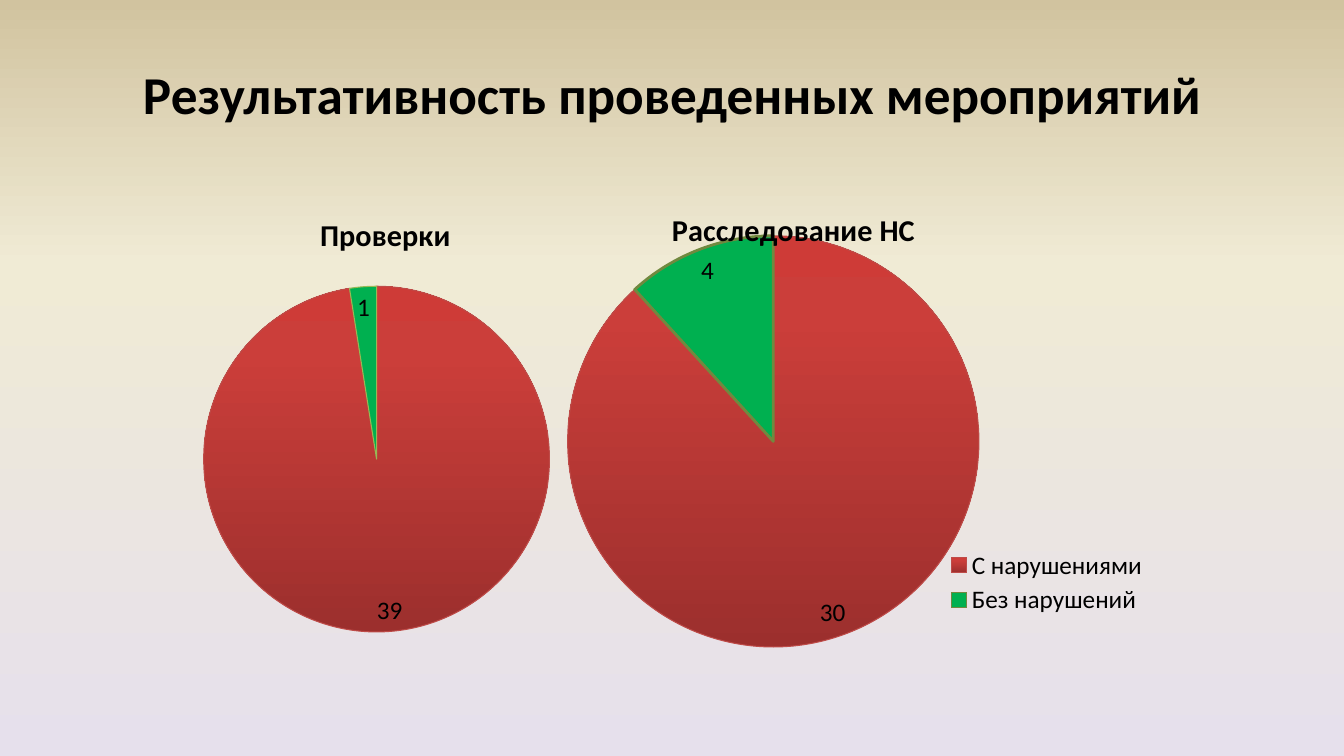
from lxml import etree
from pptx import Presentation
from pptx.chart.data import CategoryChartData as Data
from pptx.dml.color import RGBColor as RGB
from pptx.enum.chart import XL_CHART_TYPE as Kind
from pptx.enum.chart import XL_LABEL_POSITION as Spot
from pptx.enum.chart import XL_LEGEND_POSITION as Side
from pptx.enum.text import MSO_ANCHOR as Anchor
from pptx.enum.text import PP_ALIGN as Align
from pptx.oxml.ns import qn
from pptx.util import Inches, Pt

FONT = "Calibri"
HEX = {
    "text": "000000",
    "green": "00B050",
    "red edge": "BE4B48",
    "light edge": "98B955",
    "dark edge": "71893F",
}
# Gradient stops run from bottom to top
SKY = [(0, "E6E0EC"), (65, "F0EBD5"), (100, "D1C39F")]
RED = [(0, "9C2F2D"), (80, "CB3E3A"), (100, "CE3B37")]


def color(name):
    return RGB.from_string(HEX[name])


def set_font(font, size, bold=False):
    font.name, font.size, font.bold = FONT, Pt(size), bold
    font.color.rgb = color("text")


def blend(fill, root, stops):
    """Give the only gradient under root the listed stops."""
    fill.gradient()
    grad = root.find(".//" + qn("a:gradFill"))
    items = grad.find(qn("a:gsLst"))
    for old in list(items):
        items.remove(old)
    for pos, shade in stops:
        stop = etree.SubElement(items, qn("a:gs"), pos=str(pos * 1000))
        etree.SubElement(stop, qn("a:srgbClr"), val=shade)
    grad.find(qn("a:lin")).set("ang", str(270 * 60000))


def place(node, frame, spot, inner=False):
    """Fix a chart piece at a slide position: left, top and maybe size."""
    old = node.find(qn("c:layout"))
    if old is None:
        old = etree.Element(qn("c:layout"))
        before = [n for n in node if n.tag in (qn("c:tx"), qn("c:legendPos"))]
        node.insert(len(before), old)
    for kid in list(old):
        old.remove(kid)
    box = etree.SubElement(old, qn("c:manualLayout"))
    if inner:
        etree.SubElement(box, qn("c:layoutTarget"), val="inner")
    for axis in "xy":
        etree.SubElement(box, qn(f"c:{axis}Mode"), val="edge")
    left, top, wide, high = frame
    shares = [(spot[0] - left) / wide, (spot[1] - top) / high]
    shares += [size / full for size, full in zip(spot[2:], (wide, high))]
    for key, share in zip("xywh", shares):
        etree.SubElement(box, qn(f"c:{key}"), val=f"{share:.4f}")


def add_title(slide, text):
    box = slide.shapes.add_textbox(
        Inches(0.67), Inches(0.3), Inches(12), Inches(1.25))
    frame = box.text_frame
    frame.text, frame.word_wrap = text, True
    frame.vertical_anchor = Anchor.MIDDLE
    line = frame.paragraphs[0]
    line.alignment = Align.CENTER
    set_font(line.runs[0].font, 38, True)


def add_pie(slide, name, frame, cats, vals, pie, head, edge, width):
    data = Data()
    data.categories = cats
    data.add_series(name, vals)
    chart = slide.shapes.add_chart(
        Kind.PIE, *map(Inches, frame), data).chart
    set_font(chart.font, 18)
    root = chart.element

    # Heading
    title = chart.chart_title
    title.text_frame.text = name
    set_font(title.text_frame.paragraphs[0].runs[0].font, 21.6, True)
    title.include_in_layout = False
    place(root.find(".//" + qn("c:title")), frame, head)

    # Slices
    plot = chart.plots[0]
    plot.vary_by_categories = True
    place(root.find(".//" + qn("c:plotArea")), frame, pie, True)
    bad, good = (plot.series[0].points[i].format for i in range(2))
    blend(bad.fill, root, RED)
    good.fill.solid()
    good.fill.fore_color.rgb = color("green")
    for slice_, tint, size in ((bad, "red edge", 0.75), (good, edge, width)):
        slice_.line.color.rgb = color(tint)
        slice_.line.width = Pt(size)

    # Values
    plot.has_data_labels = True
    labels = plot.data_labels
    labels.show_value = True
    labels.show_percentage = False
    labels.position = Spot.INSIDE_END
    set_font(labels.font, 18)
    chart.has_legend = False
    return chart


def add_key(chart, frame, spot):
    chart.has_legend = True
    key = chart.legend
    key.position, key.include_in_layout = Side.RIGHT, False
    set_font(key.font, 18)
    place(chart.element.find(".//" + qn("c:legend")), frame, spot)


def main():
    deck = Presentation()
    deck.slide_width, deck.slide_height = Inches(13.33), Inches(7.5)
    slide = deck.slides.add_slide(deck.slide_layouts[6])
    blend(slide.background.fill, slide.element, SKY)
    add_title(slide, "Результативность проведенных мероприятий")

    # Inspections
    add_pie(slide, "Проверки", (1.35, 1.64, 4.77, 4.77), ["1", "2"],
            (39, 1), (2.02, 2.84, 3.43, 3.43), (3.12, 2.06),
            "light edge", 0.75)

    # Investigations
    frame = (5.49, 1.33, 6.48, 5.47)
    chart = add_pie(slide, "Расследование НС", frame,
                    ["С нарушениями", "Без нарушений"], (30, 4),
                    (5.63, 2.34, 4.08, 4.08), (6.61, 2.01), "dark edge", 2)
    add_key(chart, frame, (9.33, 5.42, 2.1, 0.72))

    deck.save("out.pptx")


if __name__ == "__main__":
    main()
